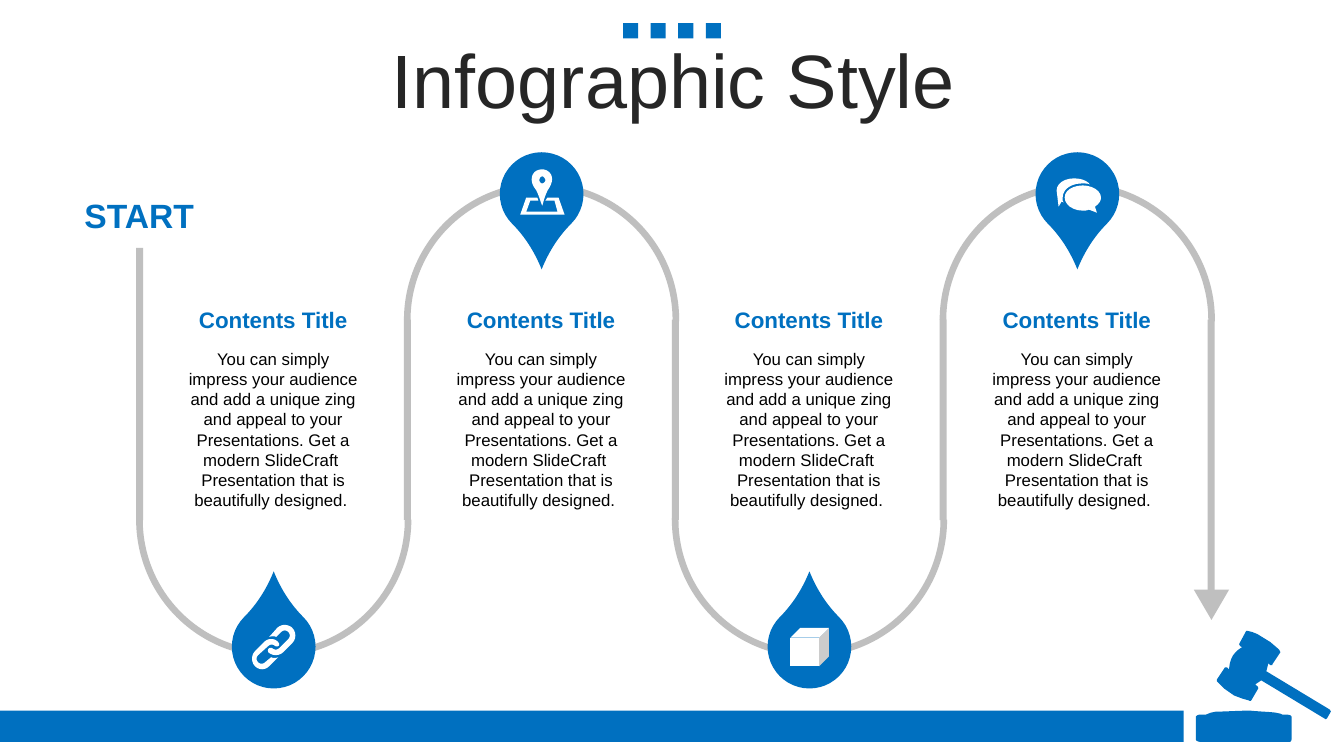
from dataclasses import dataclass

from pptx import Presentation
from pptx.dml.color import RGBColor
from pptx.enum import shapes, text
from pptx.util import Inches, Pt

TITLE = "Infographic Style"
START = "START"
BODY = ("You can simply impress your audience and add a unique zing and appeal to your "
        "Presentations. Get a modern SlideCraft  Presentation that is beautifully designed. ")
STAGES = [("Contents Title", BODY)] * 4

# Each contour is a start point, then lines (x, y) or curves (x1, y1, x2, y2, x, y).
GAVEL_BASE = [[
    (11.86, 7.11), (11.86, 7.33), (11.86, 7.35, 11.88, 7.36, 11.91, 7.36), (12.79, 7.36),
    (12.8, 7.36, 12.81, 7.35, 12.81, 7.33), (12.81, 7.11), (12.81, 7.1, 12.79, 7.09, 12.76, 7.09),
    (12.72, 7.09), (12.7, 7.08), (12.65, 7.07), (12.57, 7.06, 12.49, 7.06, 12.4, 7.05),
    (12.28, 7.05, 12.16, 7.06, 12.06, 7.06), (12.01, 7.07), (11.96, 7.09), (11.9, 7.09),
    (11.88, 7.09, 11.87, 7.1, 11.86, 7.11)]]
GAVEL = [[
    (12.09, 6.78), (12.14, 6.83), (12.24, 6.9), (12.32, 6.93), (12.39, 6.95),
    (12.4, 6.96, 12.41, 6.95, 12.41, 6.95), (12.48, 6.83), (12.48, 6.81, 12.47, 6.81, 12.45, 6.79),
    (12.51, 6.75), (13.14, 7.13), (13.15, 7.14, 13.15, 7.13, 13.16, 7.13), (13.2, 7.06),
    (13.19, 7.04), (12.56, 6.66), (12.58, 6.58), (12.6, 6.6), (12.62, 6.6, 12.62, 6.6, 12.62, 6.59),
    (12.7, 6.47), (12.69, 6.45), (12.67, 6.43), (12.6, 6.37), (12.47, 6.29), (12.42, 6.27),
    (12.38, 6.26), (12.36, 6.26), (12.29, 6.39), (12.3, 6.41), (12.32, 6.42),
    (12.24, 6.47, 12.2, 6.52, 12.19, 6.64), (12.17, 6.62), (12.15, 6.62), (12.07, 6.74),
    (12.07, 6.76)]]
MAP_PIN = [
    [(5.22, 1.96), (5.33, 1.96), (5.34, 1.99), (5.26, 1.99), (5.22, 2.1), (5.53, 2.1),
     (5.5, 1.99), (5.41, 1.99), (5.43, 1.96), (5.54, 1.96), (5.6, 2.13), (5.16, 2.13)],
    [(5.38, 1.75), (5.36, 1.75, 5.35, 1.77, 5.35, 1.79), (5.35, 1.8, 5.36, 1.82, 5.38, 1.82),
     (5.39, 1.82, 5.41, 1.8, 5.41, 1.79), (5.41, 1.77, 5.39, 1.75, 5.38, 1.75)],
    [(5.38, 1.68), (5.4, 1.68, 5.43, 1.69, 5.45, 1.71), (5.49, 1.75, 5.48, 1.81, 5.45, 1.86),
     (5.41, 1.91, 5.38, 2.04, 5.38, 2.04), (5.37, 2.04, 5.34, 1.9, 5.3, 1.86),
     (5.27, 1.82, 5.26, 1.75, 5.3, 1.71), (5.32, 1.69, 5.35, 1.68, 5.38, 1.68)]]
CHAT = [
    [(10.74, 1.84), (10.83, 1.84, 10.92, 1.89, 10.92, 1.96), (10.92, 2, 10.89, 2.03, 10.86, 2.05),
     (10.88, 2.11), (10.8, 2.08), (10.78, 2.09, 10.76, 2.09, 10.74, 2.09),
     (10.64, 2.09, 10.56, 2.03, 10.56, 1.96), (10.56, 1.89, 10.64, 1.84, 10.74, 1.84)],
    [(10.65, 1.77), (10.72, 1.77, 10.78, 1.79, 10.81, 1.83), (10.79, 1.82, 10.76, 1.82, 10.73, 1.82),
     (10.62, 1.82, 10.54, 1.88, 10.54, 1.96), (10.54, 1.99), (10.55, 2.01), (10.53, 2),
     (10.5, 2.05), (10.48, 1.89), (10.48, 1.82, 10.56, 1.77, 10.65, 1.77)]]
CHAIN = [
    [(2.69, 6.34), (2.72, 6.34, 2.74, 6.35, 2.76, 6.37), (2.79, 6.41, 2.75, 6.42, 2.73, 6.41),
     (2.71, 6.39, 2.68, 6.39, 2.66, 6.41), (2.56, 6.5), (2.54, 6.52, 2.54, 6.55, 2.56, 6.57),
     (2.58, 6.59, 2.61, 6.59, 2.63, 6.57), (2.69, 6.52), (2.7, 6.53, 2.74, 6.53, 2.76, 6.52),
     (2.67, 6.61), (2.63, 6.65, 2.57, 6.65, 2.53, 6.61), (2.49, 6.57, 2.49, 6.5, 2.53, 6.46),
     (2.62, 6.37), (2.64, 6.35, 2.66, 6.34, 2.69, 6.34)],
    [(2.82, 6.2), (2.85, 6.2, 2.88, 6.21, 2.9, 6.23), (2.94, 6.27, 2.94, 6.34, 2.9, 6.38),
     (2.81, 6.47), (2.77, 6.51, 2.7, 6.51, 2.66, 6.47), (2.65, 6.43, 2.68, 6.42, 2.7, 6.43),
     (2.72, 6.45, 2.75, 6.45, 2.77, 6.43), (2.86, 6.34), (2.88, 6.32, 2.88, 6.29, 2.86, 6.27),
     (2.84, 6.25, 2.81, 6.25, 2.79, 6.27), (2.74, 6.32), (2.73, 6.31, 2.69, 6.31, 2.67, 6.32),
     (2.75, 6.23), (2.77, 6.21, 2.8, 6.2, 2.82, 6.2)]]


@dataclass(frozen=True)
class Theme:
    """Colours, font and type sizes of the slide."""
    blue: str = "0070C0"
    grey: str = "BFBFBF"
    white: str = "FFFFFF"
    dark: str = "262626"
    black: str = "000000"
    font: str = "Arial"
    title: int = 54
    start: int = 24
    heading: int = 16
    body: int = 12


THEME = Theme()
FIRST, PITCH, BAR = 1.35, 2.6567, 0.07


def paint(shape, colour):
    """Give a shape a flat fill without line or shadow."""
    shape.shadow.inherit = False
    shape.fill.solid()
    shape.fill.fore_color.rgb = RGBColor.from_string(colour)
    shape.line.fill.background()


def add_preset(page, kind, place, colour, turn=0, adjust=()):
    """Add a flat preset shape."""
    shape = page.shapes.add_shape(kind, *map(Inches, place))
    shape.rotation = turn
    for index, value in enumerate(adjust):
        shape.adjustments[index] = value
    paint(shape, colour)


def flatten(contour, steps=6):
    """Turn a contour's lines and curves into points in EMU."""
    points = [contour[0]]
    for segment in contour[1:]:
        if len(segment) == 2:
            points.append(segment)
            continue
        x0, y0 = points[-1]
        x1, y1, x2, y2, x3, y3 = segment
        for step in range(1, steps + 1):
            t = step / steps
            a, b, c, d = (1 - t) ** 3, 3 * t * (1 - t) ** 2, 3 * t * t * (1 - t), t ** 3
            points.append((a * x0 + b * x1 + c * x2 + d * x3, a * y0 + b * y1 + c * y2 + d * y3))
    return [(Inches(x), Inches(y)) for x, y in points]


def add_outline(page, contours, colour):
    """Add one freeform made of closed contours."""
    outlines = [flatten(contour) for contour in contours]
    builder = page.shapes.build_freeform(*outlines[0][0])
    for index, points in enumerate(outlines):
        if index:
            builder.move_to(*points[0])
        builder.add_line_segments(points[1:], close=True)
    paint(builder.convert_to_shape(), colour)


def write(box, words, size, colour, bold=False, anchor=text.MSO_ANCHOR.TOP):
    """Write one centred paragraph and return it."""
    frame = box.text_frame
    frame.word_wrap = True
    frame.auto_size = text.MSO_AUTO_SIZE.NONE
    frame.vertical_anchor = anchor
    para = frame.paragraphs[0]
    para.alignment = text.PP_ALIGN.CENTER
    span = para.add_run()
    span.text = words
    span.font.name, span.font.size, span.font.bold = THEME.font, Pt(size), bold
    span.font.color.rgb = RGBColor.from_string(colour)
    return para


def add_text(page, place, *style, **options):
    """Add a text box with one paragraph."""
    write(page.shapes.add_textbox(*map(Inches, place)), *style, **options)


def main():
    """Build the slide and save it."""
    deck = Presentation()
    deck.slide_width, deck.slide_height = Inches(13.33), Inches(7.5)
    page = deck.slides.add_slide(deck.slide_layouts[5])
    kinds = shapes.MSO_SHAPE
    middle = text.MSO_ANCHOR.MIDDLE

    title = page.shapes.title
    title.left, title.top, title.width, title.height = map(Inches, (0.35, 0.44, 12.66, 0.79))
    para = write(title, TITLE, THEME.title, THEME.dark, anchor=middle)
    para.line_spacing, para.space_before = 0.9, Pt(10)

    for index in range(4):
        add_preset(page, kinds.RECTANGLE, (6.18 + 0.2733 * index, 0.23, 0.15, 0.15), THEME.blue)
    add_preset(page, kinds.RECTANGLE, (0, 7.05, 11.74, 0.31), THEME.blue)
    add_outline(page, GAVEL_BASE, THEME.blue)
    add_outline(page, GAVEL, THEME.blue)

    bars = [(2.46, 5.16)] + [(3.17, 5.16)] * 3 + [(3.17, 5.87)]
    for index, (top, bottom) in enumerate(bars):
        add_preset(page, kinds.RECTANGLE, (FIRST + PITCH * index, top, BAR, bottom - top), THEME.grey)
    add_preset(page, kinds.ISOSCELES_TRIANGLE, (11.84, 5.85, 0.35, 0.3), THEME.grey, 180)
    add_text(page, (0.64, 1.91, 1.48, 0.44), START, THEME.start, THEME.blue, bold=True, anchor=middle)

    for index, (heading, body) in enumerate(STAGES):
        left = FIRST + PITCH * index
        arc_top, arc_turn, drop_top, drop_turn = (1.81, 0, 1.51, 135) if index % 2 else (3.79, 180, 6, 315)
        add_preset(page, kinds.BLOCK_ARC, (left, arc_top, 2.73, 2.73), THEME.grey, arc_turn,
                   (108, 0.356, 0.024))
        add_preset(page, kinds.TEAR, (left + 0.95, drop_top, 0.83, 0.83), THEME.blue, drop_turn, (1.273,))
        add_text(page, (left + 0.4, 3.41, 1.92, 1.72), body, THEME.body, THEME.black)
        add_text(page, (left + 0.4, 2.99, 1.92, 0.37), heading, THEME.heading, THEME.blue, bold=True)

    for icon in (MAP_PIN, CHAT, CHAIN):
        add_outline(page, icon, THEME.white)
    add_preset(page, kinds.CUBE, (7.84, 6.23, 0.38, 0.38), THEME.white)

    deck.save("out.pptx")


if __name__ == "__main__":
    main()
